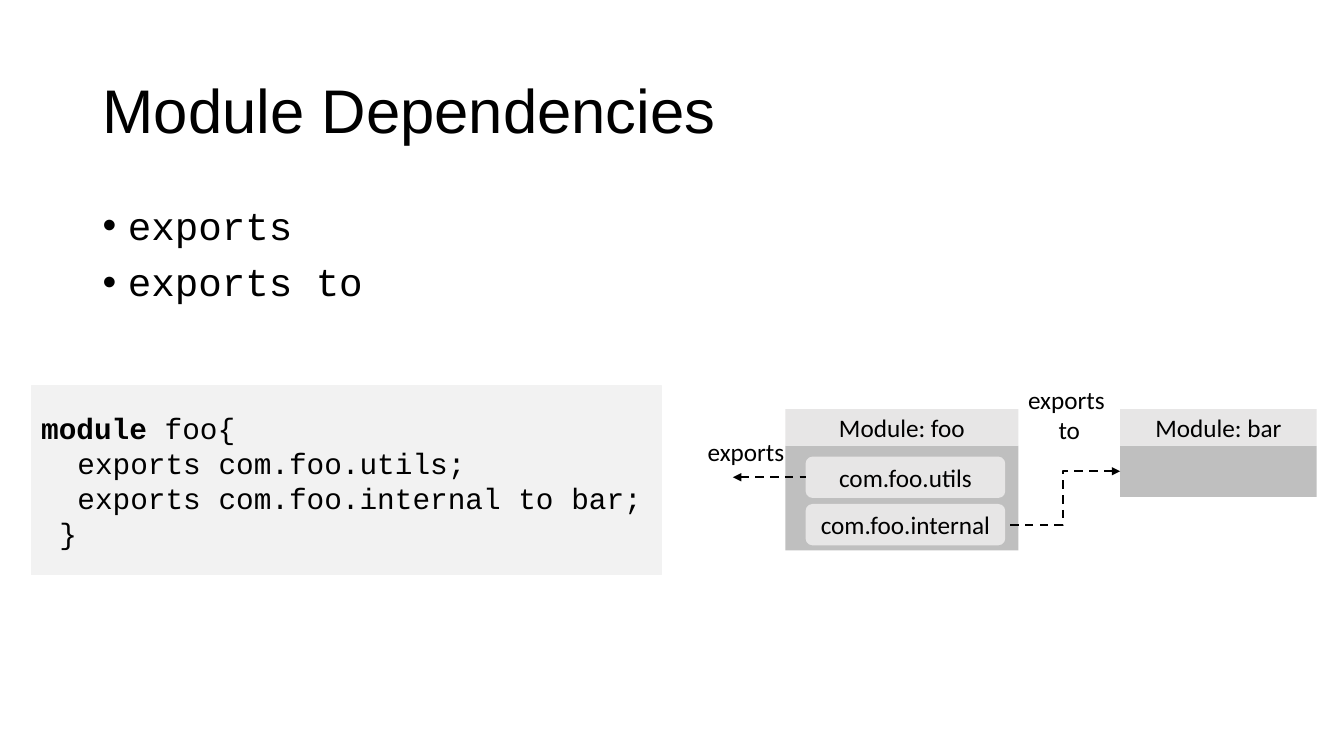
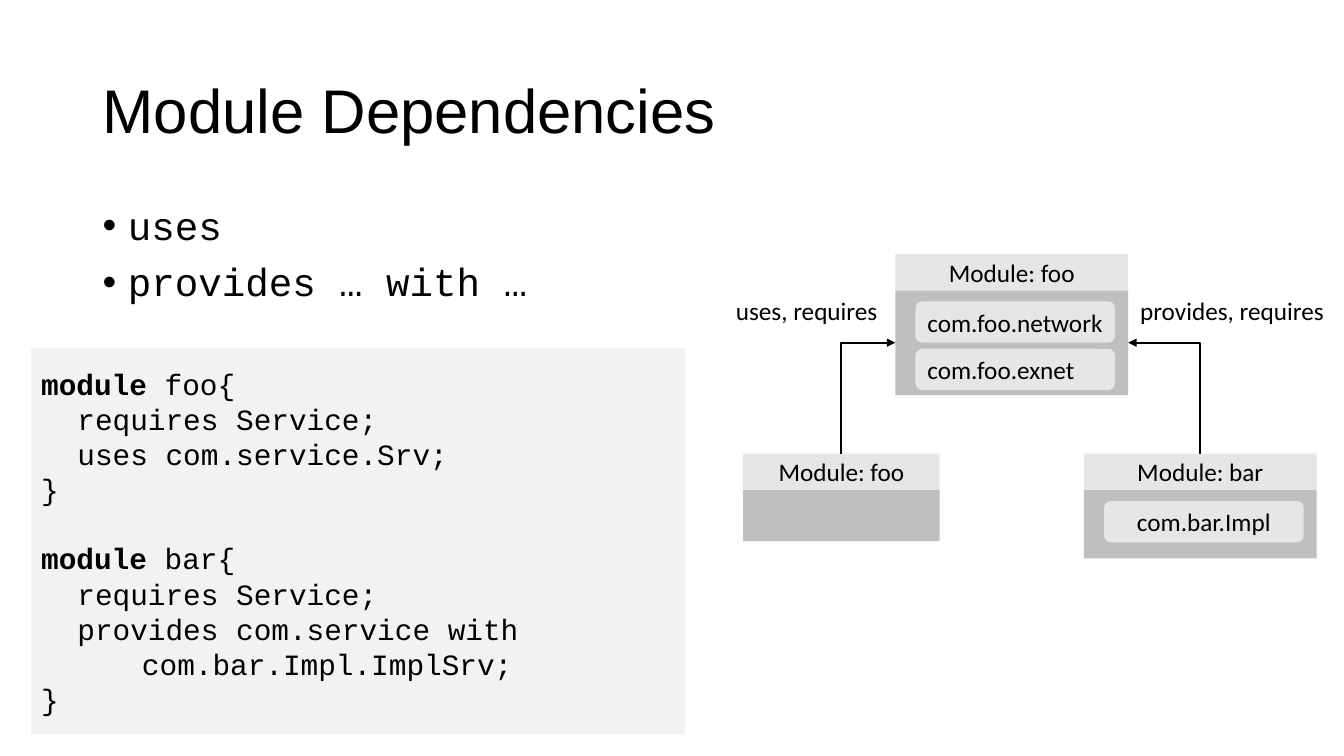
from lxml.etree import SubElement as Sub
from pptx import Presentation as Deck
from pptx.dml.color import RGBColor as Rgb
from pptx.enum.dml import MSO_LINE as Dash
from pptx.enum.shapes import MSO_CONNECTOR as Link, MSO_SHAPE as Shape
from pptx.enum.text import MSO_ANCHOR as Anchor, PP_ALIGN as Align
from pptx.oxml.ns import qn
from pptx.util import Pt

BLACK, PALE, LIGHT, GREY = "000000", "F2F2F2", "E7E6E6", "BFBFBF"
SANS, MONO, PLAIN = "Arial", "Courier New", "Calibri"
TOP, LEFT, RIGHT = 0, 1, 3
CHAR = 18  # width of one code character
HEAD = 36  # height of a module's title bar


def px(n):
    """Turn px, 100 to the inch, into EMU."""
    return n * 9144


def tint(code):
    return Rgb.from_string(code)


def style(para, face, size, align=Align.LEFT):
    font = para.font
    font.name, font.size = face, Pt(size)
    font.color.rgb = tint(BLACK)
    para.alignment = align


def write(frame, lines, face, size, align=Align.LEFT):
    """Put one paragraph per line into the frame and return them."""
    paras = []
    for i, line in enumerate(lines):
        para = frame.add_paragraph() if i else frame.paragraphs[0]
        para.text = line
        style(para, face, size, align)
        paras.append(para)
    return paras


def indent(para, left, first=0):
    props = para._p.get_or_add_pPr()
    props.set("marL", str(px(left)))
    props.set("indent", str(px(first)))
    return props


def add_text(slide, area, wrap=True):
    frame = slide.shapes.add_textbox(*map(px, area)).text_frame
    frame.word_wrap = wrap
    return frame


def add_box(slide, kind, area, fill):
    box = slide.shapes.add_shape(kind, *map(px, area))
    box.shadow.inherit = False
    box.fill.solid()
    box.fill.fore_color.rgb = tint(fill)
    box.line.fill.background()
    return box


def add_title(slide, text):
    frame = add_text(slide, (92, 40, 1150, 145))
    frame.vertical_anchor = Anchor.MIDDLE
    write(frame, [text], SANS, 44)[0].line_spacing = 0.9


def add_list(slide, items):
    frame = add_text(slide, (92, 200, 1150, 476))
    for para in write(frame, items, MONO, 28):
        para.line_spacing = 0.9
        para.space_before = Pt(10)
        props = indent(para, 25, -25)
        Sub(props, qn("a:buFont")).set("typeface", SANS)
        Sub(props, qn("a:buChar")).set("char", "•")


def add_code(slide, area, lines):
    """Draw a code panel; each line is (indent in px, text)."""
    box = add_box(slide, Shape.RECTANGLE, area, PALE)
    box.line.color.rgb = tint(PALE)
    box.line.width = Pt(1)
    paras = write(box.text_frame, [""] * len(lines), MONO, 21)
    for i, (para, (left, text)) in enumerate(zip(paras, lines)):
        indent(para, left)
        word, gap, rest = text.partition(" ")
        para.add_run().text = word
        if gap:
            para.add_run().text = gap + rest
        if word == "module":
            para.runs[0].font.bold = True
            if i:
                para.space_before = Pt(24)


def add_label(slide, area, *lines, align=Align.LEFT):
    write(add_text(slide, area, wrap=False), lines, PLAIN, 18, align)


def add_module(slide, area, name, packs=(), align=Align.CENTER):
    """Draw a module; return its title bar, its body and its packages."""
    x, y, wide, high = area
    y_body = y + HEAD
    body = add_box(slide, Shape.RECTANGLE, (x, y_body, wide, high - HEAD), GREY)
    bar = add_box(slide, Shape.RECTANGLE, (x, y, wide, HEAD), LIGHT)
    write(bar.text_frame, [f"Module: {name}"], PLAIN, 18, Align.CENTER)
    cells = []
    for i, pack in enumerate(packs):
        spot = (x + 20, y_body + 11 + 47 * i, 198, 41)
        cell = add_box(slide, Shape.ROUNDED_RECTANGLE, spot, LIGHT)
        write(cell.text_frame, [pack], PLAIN, 18, align)
        cells.append(cell)
    return bar, body, cells


def add_link(slide, kind, end, start=None, dash=False, bend=None):
    """Join start to end, each (shape, side), with the arrowhead at start."""
    link = slide.shapes.add_connector(kind, 0, 0, 0, 0)
    if start:
        link.begin_connect(*start)
    link.end_connect(*end)
    line = link.line
    line.color.rgb = tint(BLACK)
    line.width = Pt(1.5)
    if dash:
        line.dash_style = Dash.DASH
    Sub(line._get_or_add_ln(), qn("a:headEnd")).set("type", "triangle")
    props = link._element.spPr
    Sub(props, qn("a:effectLst"))
    if bend:
        props.find(qn("a:prstGeom")).set("prst", bend)
    return link


def new_slide(deck, items):
    slide = deck.slides.add_slide(deck.slide_layouts[6])
    add_title(slide, "Module Dependencies")
    add_list(slide, items)
    return slide


def show_exports(deck):
    slide = new_slide(deck, ["exports", "exports to"])
    add_code(slide, (31, 383, 625, 187), [
        (0, "module foo{"),
        (2 * CHAR, "exports com.foo.utils;"),
        (2 * CHAR, "exports com.foo.internal to bar;"),
        (CHAR, "}"),
    ])
    add_label(slide, (692, 428, 97, 40), "exports")
    add_label(slide, (996, 376, 129, 71), "exports ", "to", align=Align.CENTER)
    packs = ["com.foo.utils", "com.foo.internal"]
    utils, inner = add_module(slide, (779, 406, 231, 140), "foo", packs)[2]
    body = add_module(slide, (1111, 406, 195, 87), "bar")[1]
    out = add_link(slide, Link.STRAIGHT, (utils, LEFT), dash=True)
    out.begin_x, out.begin_y = px(727), out.end_y
    add_link(slide, Link.ELBOW, (inner, RIGHT), (body, LEFT), dash=True)


def show_uses(deck):
    slide = new_slide(deck, ["uses", "provides … with …"])
    add_code(slide, (31, 346, 648, 382), [
        (0, "module foo{"),
        (2 * CHAR, "requires Service;"),
        (2 * CHAR, "uses com.service.Srv;"),
        (0, "}"),
        (0, "module bar{"),
        (2 * CHAR, "requires Service;"),
        (2 * CHAR, "provides com.service with"),
        (100, "com.bar.Impl.ImplSrv;"),
        (0, "}"),
    ])
    packs = ["com.foo.network", "com.foo.exnet"]
    hub = add_module(slide, (888, 252, 231, 140), "foo", packs, Align.LEFT)[1]
    user = add_module(slide, (737, 450, 195, 87), "foo")[0]
    giver = add_module(slide, (1075, 450, 231, 104), "bar", ["com.bar.Impl"])[0]
    for side, bar in ((LEFT, user), (RIGHT, giver)):
        add_link(slide, Link.ELBOW, (bar, TOP), (hub, side), bend="bentConnector2")
    add_label(slide, (720, 288, 162, 40), "uses, requires")
    add_label(slide, (1121, 288, 205, 40), "provides, requires")


def main():
    deck = Deck()
    deck.slide_width, deck.slide_height = px(1333), px(750)
    show_exports(deck)
    show_uses(deck)
    deck.save("out.pptx")


if __name__ == "__main__":
    main()
